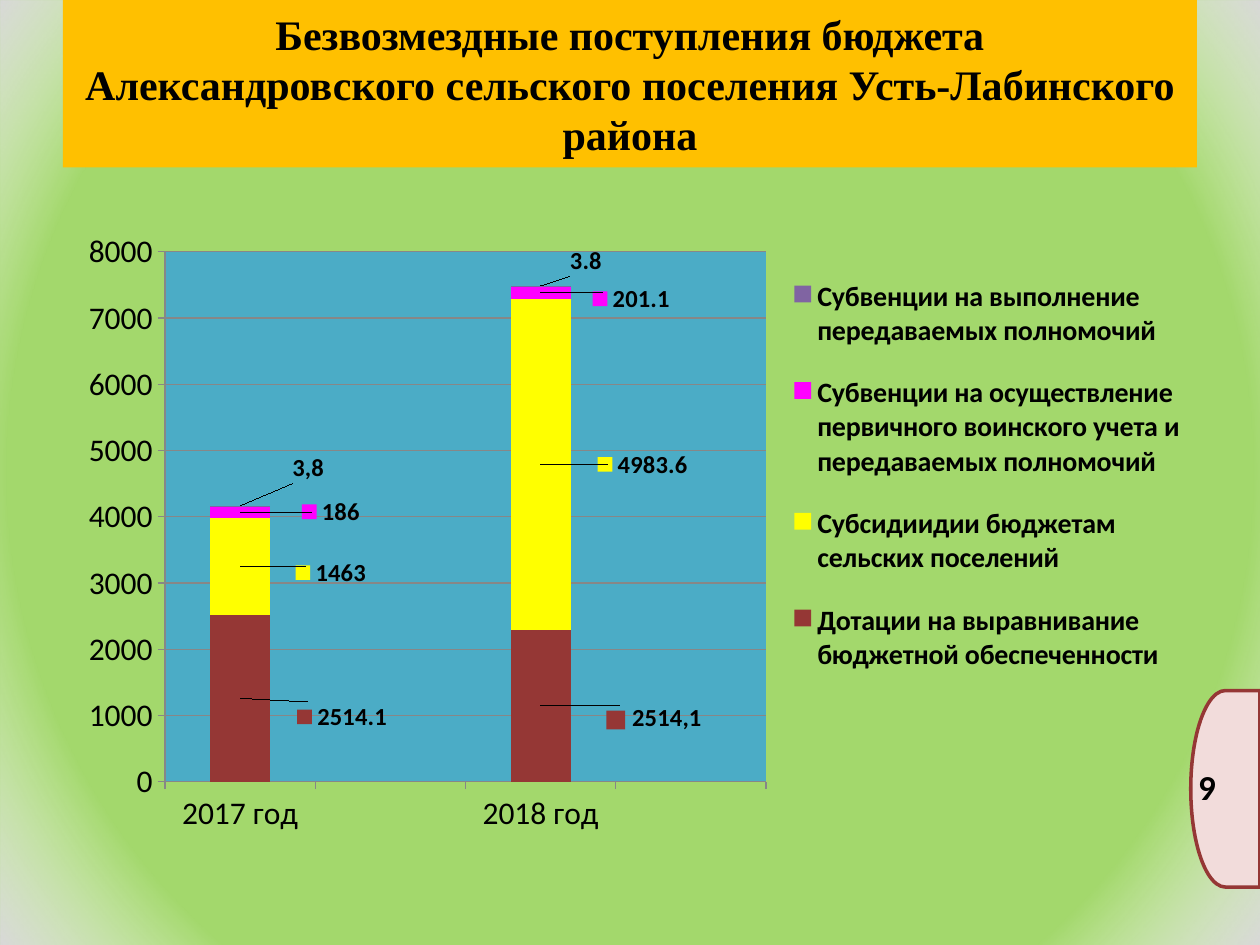
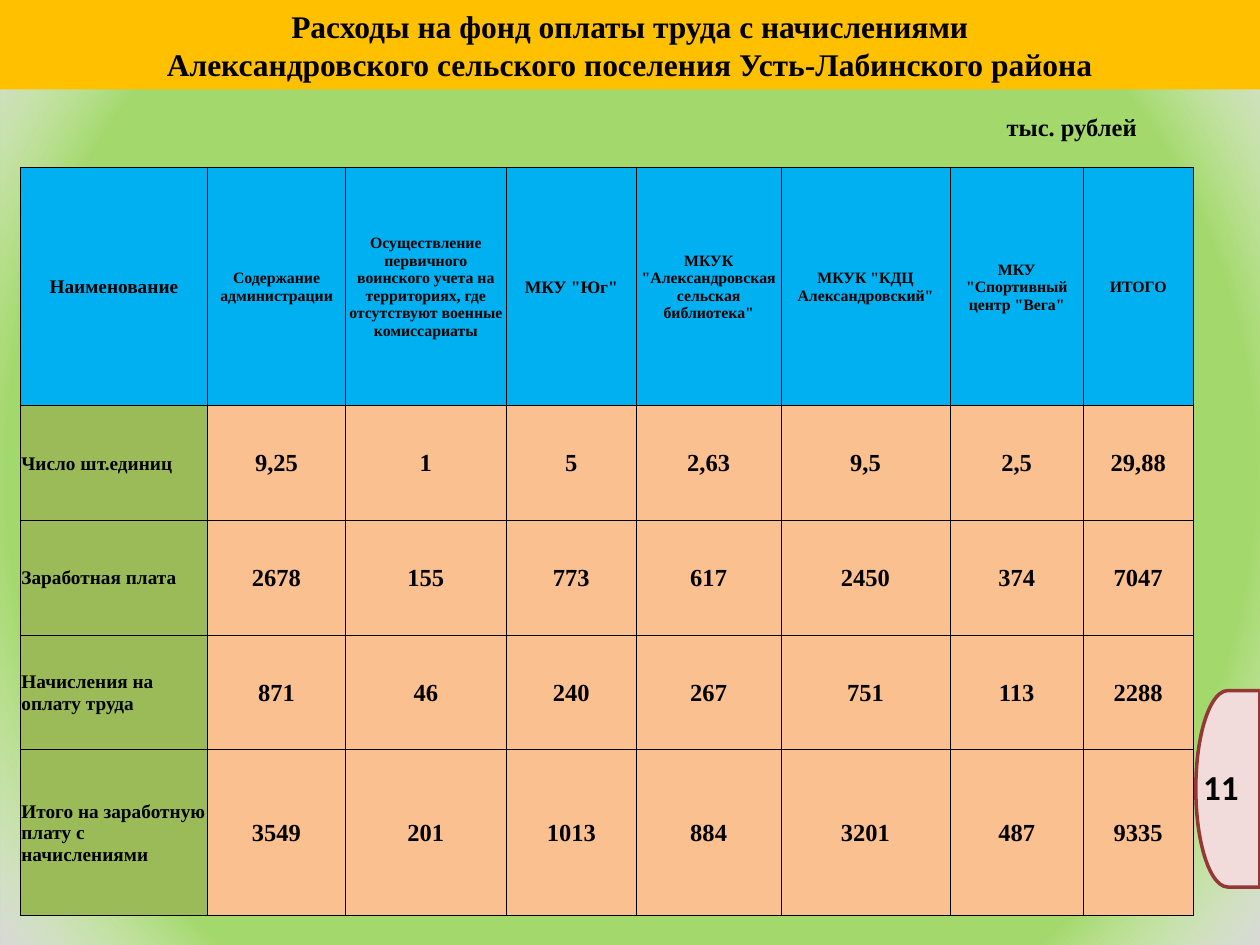
"""Build two budget slides: a stacked chart of receipts and a payroll table."""
from typing import NamedTuple

from pptx import Presentation
from pptx.chart.data import CategoryChartData
from pptx.dml.color import RGBColor
from pptx.enum import chart as kinds, shapes, text
from pptx.oxml import parse_xml
from pptx.oxml.ns import nsdecls, qn
from pptx.util import Inches, Pt

GREEN = RGBColor(0xA3, 0xD8, 0x6C)
GOLD = RGBColor(0xFF, 0xC0, 0x00)
BLACK = RGBColor(0x00, 0x00, 0x00)
GREY = RGBColor(0x87, 0x87, 0x87)
PINK = RGBColor(0xF2, 0xDC, 0xDB)
WINE = RGBColor(0x95, 0x37, 0x35)
TEAL = RGBColor(0x4B, 0xAC, 0xC6)
LEMON = RGBColor(0xFF, 0xFF, 0x00)
ROSE = RGBColor(0xFF, 0x00, 0xFF)
PLUM = RGBColor(0x80, 0x64, 0xA2)
BLUE = RGBColor(0x00, 0xB0, 0xF0)
OLIVE = RGBColor(0x9B, 0xBB, 0x59)
PEACH = RGBColor(0xFA, 0xC0, 0x90)
SERIF, SANS = "Times New Roman", "Calibri"
LEFT, MID = text.PP_ALIGN.LEFT, text.PP_ALIGN.CENTER


class Box(NamedTuple):
    """Place and size in inches."""
    x: float
    y: float
    w: float
    h: float

    def emu(self) -> list:
        """Return the four lengths for python-pptx."""
        return [Inches(n) for n in self]


class Tag(NamedTuple):
    """Data label: shift as a share of the chart, and its own text if any."""
    dx: float
    dy: float
    note: str = ""


class Band(NamedTuple):
    """Chart series with one tag for each year."""
    name: str
    color: RGBColor
    vals: tuple
    tags: tuple
    key: bool = True


YEARS = ("2017 год", "", "2018 год", "")
BANDS = (
    Band("Дотации на выравнивание бюджетной обеспеченности", WINE,
         (2514.1, 2294.9), (Tag(0.09, 0.03), Tag(0.1, 0.02, "2514,1"))),
    Band("Субсидиидии бюджетам сельских поселений", LEMON,
         (1463, 4983.6), (Tag(0.08, 0.01), Tag(0.09, 0))),
    Band("Субвенции на осуществление первичного воинского учета "
         "и передаваемых полномочий", ROSE,
         (186, 201.1), (Tag(0.08, 0), Tag(0.08, 0.01))),
    Band("Субвенции на выполнение передаваемых полномочий", PLUM,
         (3.8, 3.8), (Tag(0.06, -0.06, "3,8"), Tag(0.04, -0.04)), False),
)

COLS = (1.49, 1.09, 1.28, 1.03, 1.15, 1.34, 1.06, 0.87)
ROWS = (1.89, 0.91, 0.91, 0.91, 1.32)
HEADS = ("Наименование", "Содержание администрации",
         "Осуществление первичного воинского учета на территориях, "
         "где отсутствуют военные комиссариаты",
         'МКУ "Юг"', 'МКУК "Александровская сельская библиотека"',
         'МКУК "КДЦ Александровский"', 'МКУ "Спортивный центр "Вега"', "ИТОГО")
SIZES = (11, 9, 9, 10, 9, 9, 9, 9)
COSTS = (
    ("Число шт.единиц", "9,25", "1", "5", "2,63", "9,5", "2,5", "29,88"),
    ("Заработная плата", "2678", "155", "773", "617", "2450", "374", "7047"),
    ("Начисления на оплату труда", "871", "46", "240", "267", "751", "113", "2288"),
    ("Итого на заработную плату с начислениями",
     "3549", "201", "1013", "884", "3201", "487", "9335"),
)


def style(font, size: float, face: str = SERIF, bold: bool = True) -> None:
    """Set the font in black."""
    font.size, font.name, font.bold = Pt(size), face, bold
    font.color.rgb = BLACK


def put(frame, words: str, *, size: float, face: str = SERIF, align=LEFT) -> None:
    """Write bold text, one paragraph a line."""
    frame.word_wrap = True
    frame.text = words
    for para in frame.paragraphs:
        para.alignment = align
        for run in para.runs:
            style(run.font, size, face)


def block(slide, kind, box: Box, fill: RGBColor):
    """Add a filled shape without line or shadow."""
    shape = slide.shapes.add_shape(kind, *box.emu())
    shape.shadow.inherit = False
    shape.fill.solid()
    shape.fill.fore_color.rgb = fill
    shape.line.fill.background()
    return shape


def label(slide, box: Box, words: str, **form) -> None:
    """Add a text box."""
    put(slide.shapes.add_textbox(*box.emu()).text_frame, words, **form)


def start(deck):
    """Add a green slide that fades to grey in its corners."""
    slide = deck.slides.add_slide(deck.slide_layouts[6])
    slide.background.fill.solid()
    slide.background.fill.fore_color.rgb = GREEN
    haze = block(slide, shapes.MSO_SHAPE.RECTANGLE, Box(0, 0, 10, 7.5), GREEN)
    solid = haze.element.spPr.find(qn("a:solidFill"))
    solid.getparent().replace(solid, parse_xml(
        f'<a:gradFill {nsdecls("a")} rotWithShape="1"><a:gsLst>'
        '<a:gs pos="79000"><a:srgbClr val="FFFFFF"><a:alpha val="0"/></a:srgbClr></a:gs>'
        '<a:gs pos="100000"><a:srgbClr val="D9D9D9"/></a:gs></a:gsLst>'
        '<a:path path="circle"><a:fillToRect l="50000" t="50000" r="50000" b="50000"/>'
        '</a:path></a:gradFill>'))
    return slide


def title(slide, box: Box, words: str, size: float) -> None:
    """Add the gold title band."""
    band = block(slide, shapes.MSO_SHAPE.RECTANGLE, box, GOLD)
    band.text_frame.vertical_anchor = text.MSO_ANCHOR.MIDDLE
    put(band.text_frame, words, size=size, align=MID)


def badge(slide, num: str, wide: float) -> None:
    """Add the page number tab at the right edge."""
    tab = block(slide, shapes.MSO_SHAPE.FLOWCHART_DELAY,
                Box(10 - wide, 5.48, wide, 1.56), PINK)
    tab.rotation = 180
    tab.line.color.rgb = WINE
    tab.line.width = Pt(2)
    label(slide, Box(9.96 - wide, 6.03, wide + 0.03, 0.44), num, size=20, face=SANS)


def layout(box: Box, inner: bool = False):
    """Return a manual layout in shares of the chart."""
    target = '<c:layoutTarget val="inner"/>' if inner else ""
    return parse_xml(
        f'<c:layout {nsdecls("c")}><c:manualLayout>{target}'
        '<c:xMode val="edge"/><c:yMode val="edge"/>'
        f'<c:x val="{box.x}"/><c:y val="{box.y}"/>'
        f'<c:w val="{box.w}"/><c:h val="{box.h}"/></c:manualLayout></c:layout>')


def shift(node, tag: Tag, key: bool) -> None:
    """Move a data label and switch its legend key."""
    node.insert(1, parse_xml(
        f'<c:layout {nsdecls("c")}><c:manualLayout><c:x val="{tag.dx}"/>'
        f'<c:y val="{tag.dy}"/></c:manualLayout></c:layout>'))
    node.find(qn("c:showLegendKey")).set("val", str(int(key)))


def paint(series, band: Band) -> None:
    """Colour a series and write its labels."""
    series.format.fill.solid()
    series.format.fill.fore_color.rgb = band.color
    series.invert_if_negative = False
    for spot, tag in zip((0, 2), band.tags):
        mark = series.points[spot].data_label
        if tag.note:
            put(mark.text_frame, tag.note, size=14, face=SANS)
        else:
            style(mark.font, 14, SANS)


def graph(slide, box: Box) -> None:
    """Add the stacked chart of receipts."""
    data = CategoryChartData()
    data.categories = YEARS
    for band in BANDS:
        first, last = band.vals
        data.add_series(band.name, (first, None, last, None))
    chart = slide.shapes.add_chart(
        kinds.XL_CHART_TYPE.COLUMN_STACKED, *box.emu(), data).chart
    style(chart.font, 18, SANS, False)
    chart.has_title = False
    plot = chart.plots[0]
    plot.gap_width, plot.overlap, plot.vary_by_categories = 150, 100, False

    for axis in (chart.category_axis, chart.value_axis):
        axis.major_tick_mark = kinds.XL_TICK_MARK.OUTSIDE
        axis.format.line.color.rgb = GREY
    scale = chart.value_axis
    scale.minimum_scale, scale.maximum_scale, scale.major_unit = 0, 8000, 1000
    scale.major_gridlines.format.line.color.rgb = GREY

    chart.has_legend = True
    chart.legend.position = kinds.XL_LEGEND_POSITION.RIGHT
    chart.legend.include_in_layout = False
    style(chart.legend.font, 16, SANS)

    for series, band in zip(plot.series, BANDS):
        paint(series, band)
    marks = [(tag, band.key) for band in BANDS for tag in band.tags]
    for node, (tag, key) in zip(chart.element.iter(qn("c:dLbl")), marks):
        shift(node, tag, key)

    area = next(chart.element.iter(qn("c:plotArea")))
    legend = next(chart.element.iter(qn("c:legend")))
    for host, spot, room in ((area, 0, Box(0.09, 0.05, 0.53, 0.85)),
                             (legend, 1, Box(0.64, 0.05, 0.35, 0.72))):
        for old in host.findall(qn("c:layout")):
            host.remove(old)
        host.insert(spot, layout(room, host is area))
    back = parse_xml(f'<c:spPr {nsdecls("c", "a")}><a:solidFill>'
                     f'<a:srgbClr val="{TEAL}"/></a:solidFill></c:spPr>')
    area.append(back)


def fill(cell, words: str, size: float, color: RGBColor, align=MID) -> None:
    """Write and colour a cell with thin black borders."""
    cell.margin_left = cell.margin_right = cell.margin_top = Inches(0.01)
    cell.margin_bottom = 0
    cell.vertical_anchor = text.MSO_ANCHOR.MIDDLE
    put(cell.text_frame, words, size=size, align=align)
    cell.fill.solid()
    cell.fill.fore_color.rgb = color
    props = cell._tc.get_or_add_tcPr()
    for spot, side in enumerate("LRTB"):
        props.insert(spot, parse_xml(
            f'<a:ln{side} {nsdecls("a")} w="{Pt(0.5)}"><a:solidFill>'
            f'<a:srgbClr val="{BLACK}"/></a:solidFill></a:ln{side}>'))


def grid(slide, box: Box) -> None:
    """Add the payroll table."""
    table = slide.shapes.add_table(len(ROWS), len(COLS), *box.emu()).table
    table.first_row = table.horz_banding = False
    for col, wide in zip(table.columns, COLS):
        col.width = Inches(wide)
    for row, high in zip(table.rows, ROWS):
        row.height = Inches(high)
    for c, (words, size) in enumerate(zip(HEADS, SIZES)):
        fill(table.cell(0, c), words, size, BLUE)
    for r, (name, *sums) in enumerate(COSTS, 1):
        fill(table.cell(r, 0), name, 11, OLIVE, LEFT)
        for c, value in enumerate(sums, 1):
            fill(table.cell(r, c), value, 14, PEACH)


def main() -> None:
    """Build and save the deck."""
    deck = Presentation()
    deck.slide_width, deck.slide_height = Inches(10), Inches(7.5)

    slide = start(deck)
    title(slide, Box(0.5, 0, 9, 1.33),
          "Безвозмездные поступления бюджета\n"
          "Александровского сельского поселения Усть-Лабинского района", 24)
    graph(slide, Box(0.5, 1.75, 9, 4.95))
    badge(slide, "9", 0.55)

    slide = start(deck)
    title(slide, Box(0, 0, 10, 0.71),
          "Расходы на фонд оплаты труда с начислениями\n"
          "Александровского сельского поселения Усть-Лабинского района", 18)
    badge(slide, "11", 0.51)
    label(slide, Box(7.89, 0.84, 1.91, 0.34), "тыс. рублей", size=14)
    grid(slide, Box(0.16, 1.33, sum(COLS), sum(ROWS)))

    deck.save("out.pptx")


if __name__ == "__main__":
    main()
